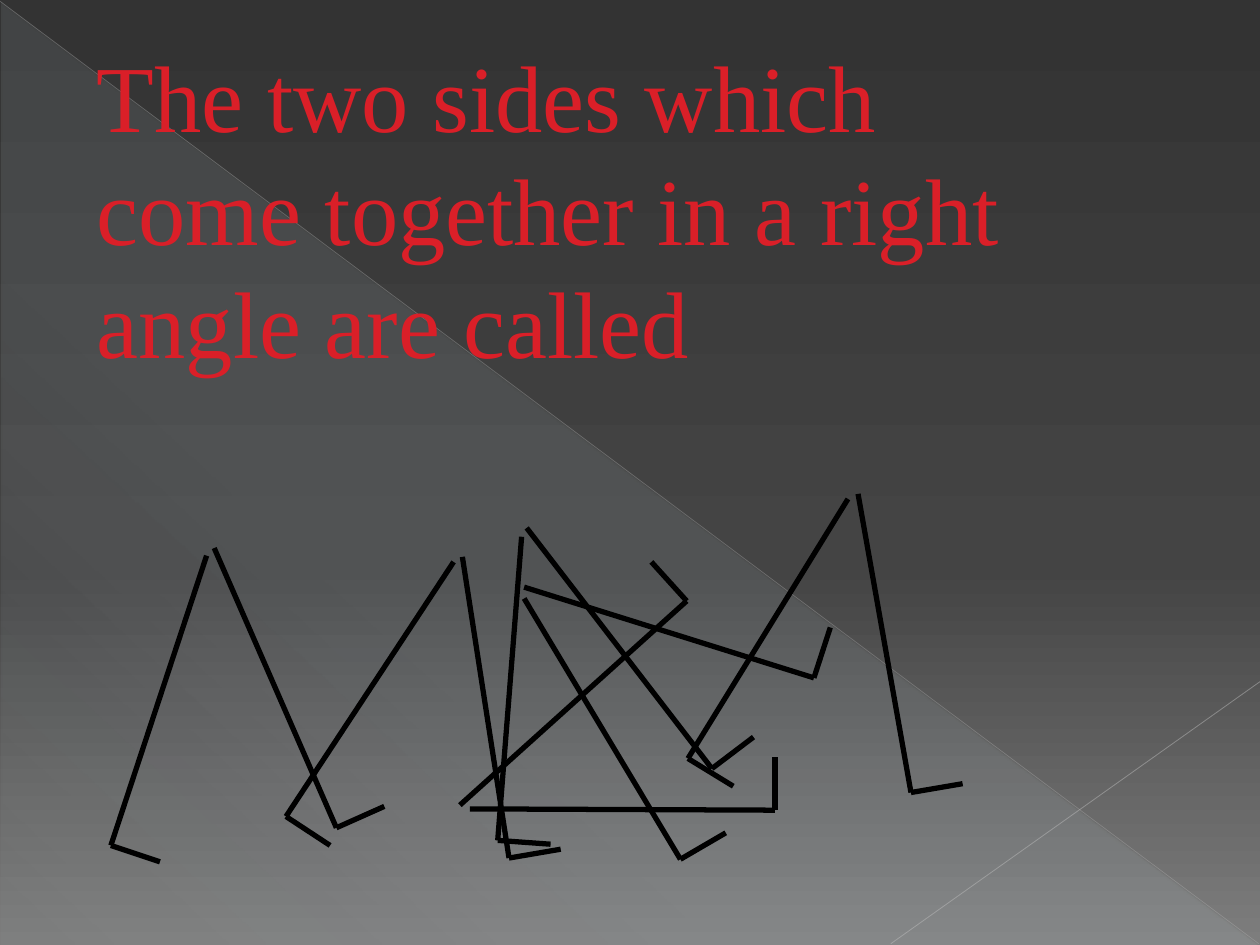
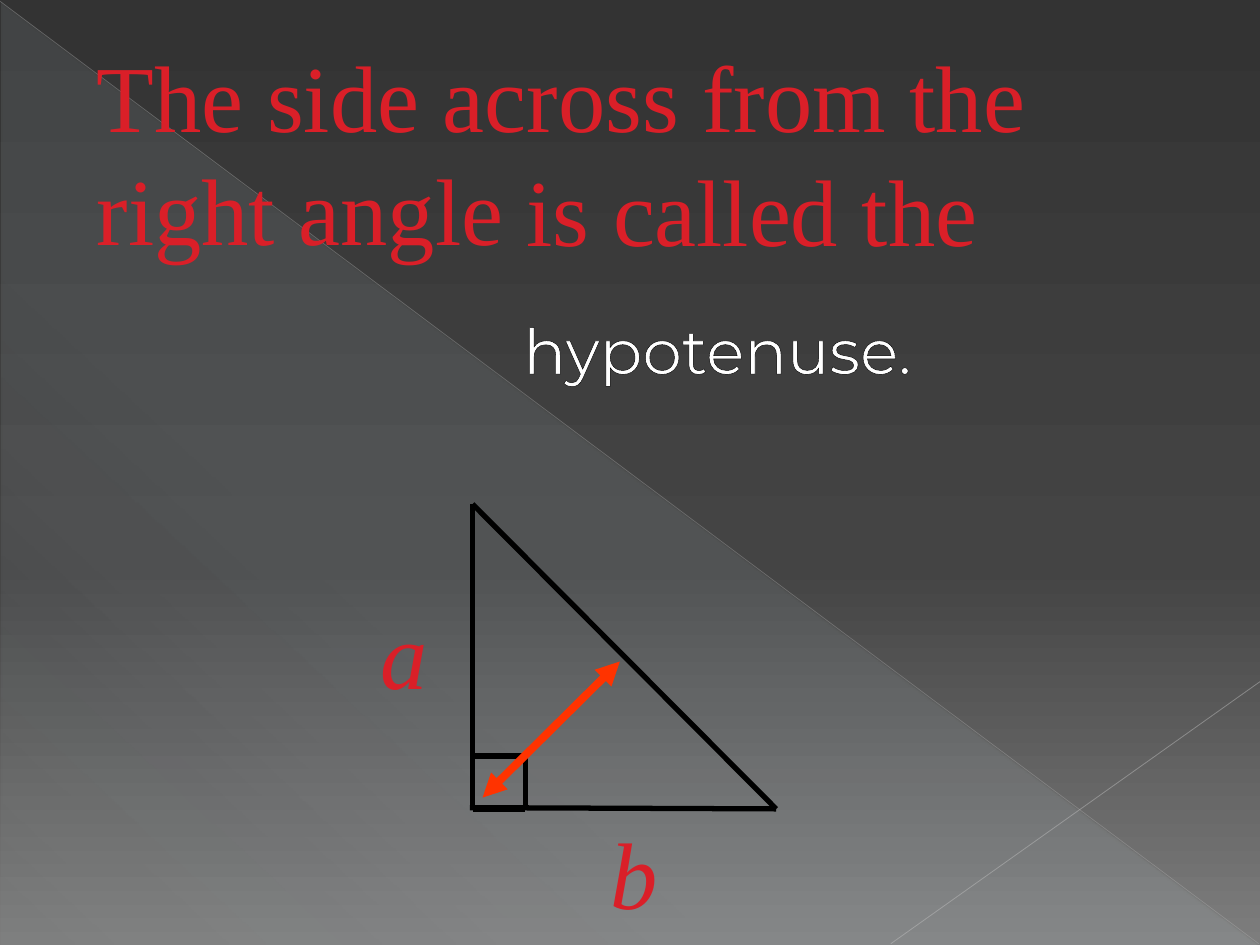
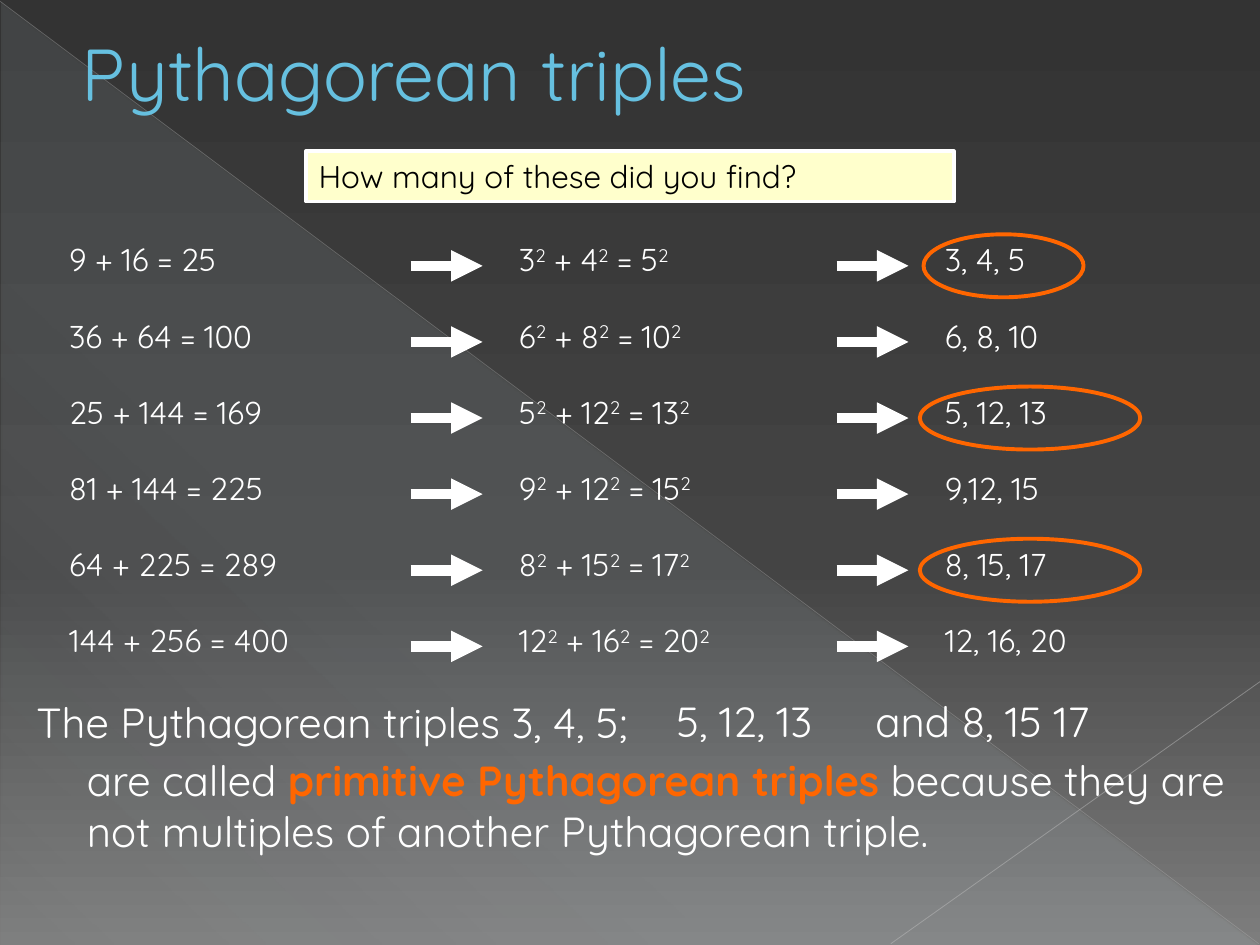
from dataclasses import dataclass
from typing import NamedTuple

from lxml import etree
from pptx import Presentation
from pptx.dml.color import RGBColor
from pptx.enum import shapes as kinds, text as modes
from pptx.oxml import ns
from pptx.util import Inches, Pt

HUES = {
    "black": "000000", "white": "FFFFFF", "red": "DA1F28", "flame": "FF3300",
    "orange": "FF6600", "cream": "FFFFCC", "sky": "66C0E0", "teal": "1F7084",
    "ice": "DEF5FA", "edge": "B9B9B9", "crease": "C1C1C1",
    "top": "333333", "mid": "444444", "low": "7D7D7D",
}
SERIF, SANS, ROUND = "Times New Roman", "Montserrat", "Quicksand"
BODY = {"name": ROUND, "size": Pt(18)}
NOTE = {"name": ROUND, "size": Pt(24)}
CLAIM = {"name": SERIF, "size": Pt(54)}
GROW = modes.MSO_AUTO_SIZE.SHAPE_TO_FIT_TEXT
LEFT, MID = modes.PP_ALIGN.LEFT, modes.PP_ALIGN.CENTER


class Point(NamedTuple):
    x: float
    y: float


class Box(NamedTuple):
    x: float
    y: float
    w: float
    h: float


class Run(NamedTuple):
    text: str
    hue: str = "white"
    bold: bool = False
    power: bool = False


class Stop(NamedTuple):
    at: int
    hue: str
    alpha: int = 100


@dataclass
class Stroke:
    hue: str = "black"
    width: float = 3
    alpha: int = 100
    ends: tuple = ()


@dataclass
class Triple:
    a: int
    b: int
    c: int
    label: str
    ring: float = 0


ANGLES = [
    [[(1.64, 4.41), (0.88, 6.71), (1.27, 6.84)], [(1.7, 4.35), (2.67, 6.57), (3.05, 6.4)]],
    [[(3.6, 4.46), (2.27, 6.48), (2.62, 6.71)], [(3.67, 4.42), (4.04, 6.81), (4.45, 6.74)]],
    [[(4.14, 4.26), (3.95, 6.67), (4.37, 6.7)], [(4.18, 4.19), (5.65, 6.1), (5.98, 5.85)]],
    [[(6.73, 3.96), (5.46, 6.02), (5.82, 6.24)], [(6.81, 3.92), (7.23, 6.29), (7.64, 6.22)]],
    [[(4.16, 4.75), (5.4, 6.82), (5.76, 6.61)], [(4.16, 4.66), (6.46, 5.38), (6.59, 4.98)]],
    [[(3.73, 6.42), (6.15, 6.43), (6.15, 6.01)], [(3.65, 6.39), (5.45, 4.77), (5.17, 4.46)]],
]
TRIPLES = [
    Triple(3, 4, 5, "3, 4, 5", 1.27),
    Triple(6, 8, 10, "6, 8, 10"),
    Triple(5, 12, 13, "5, 12, 13", 1.75),
    Triple(9, 12, 15, "9,12, 15"),
    Triple(8, 15, 17, "8, 15, 17", 1.75),
    Triple(12, 16, 20, "12, 16, 20"),
]


def rgb(hue: str) -> RGBColor:
    return RGBColor.from_string(HUES[hue])


def apply(item, form: dict) -> None:
    for key, value in form.items():
        setattr(item, key, value)


def tag(parent, name: str, **attrs):
    return etree.SubElement(parent, ns.qn(name), attrs)


def tint(parent, hue: str, alpha: int = 100) -> None:
    color = tag(parent, "a:srgbClr", val=HUES[hue])
    if alpha < 100:
        tag(color, "a:alpha", val=str(alpha * 1000))


def blend(owner, fill, stops: list[Stop], angle: int) -> None:
    """Give owner's fill a linear gradient, its angle counted clockwise."""
    fill.gradient()
    fill.gradient_angle = 360 - angle
    ramp = next(owner.element.iter(ns.qn("a:gsLst")))
    for old in list(ramp):
        ramp.remove(old)
    for stop in stops:
        tint(tag(ramp, "a:gs", pos=str(stop.at * 1000)), stop.hue, stop.alpha)


def draw_line(shapes, start, end, stroke: Stroke = Stroke()):
    link = shapes.add_connector(kinds.MSO_CONNECTOR.STRAIGHT,
                                *map(Inches, (*start, *end)))
    link.line.color.rgb = rgb(stroke.hue)
    link.line.width = Pt(stroke.width)
    if stroke.alpha < 100:
        color = next(link.element.iter(ns.qn("a:srgbClr")))
        tag(color, "a:alpha", val=str(stroke.alpha * 1000))
    for end_name in stroke.ends:
        tag(link.line._get_or_add_ln(), end_name, type="triangle")
    tag(link.element.spPr, "a:effectLst")
    return link


def draw_path(shapes, points, stroke: Stroke = Stroke()) -> None:
    for start, end in zip(points, points[1:]):
        draw_line(shapes, start, end, stroke)


def draw_shape(shapes, kind, box: Box):
    shape = shapes.add_shape(kind, *map(Inches, box))
    shape.shadow.inherit = False
    return shape


def write(frame, runs: list[Run], font: dict, align=LEFT):
    para = frame.paragraphs[0]
    para.alignment = align
    for part in runs:
        run = para.add_run()
        run.text = part.text
        apply(run.font, {**font, "bold": part.bold})
        run.font.color.rgb = rgb(part.hue)
        if part.power:
            run.font._element.set("baseline", "30000")
    return para


def edge_text(para, hue: str, width: float) -> None:
    """Outline the letters of a paragraph."""
    for run in para.runs:
        props = run.font._element
        line = etree.Element(ns.qn("a:ln"), w=str(Pt(width)))
        tint(tag(line, "a:solidFill"), hue)
        props.insert(0, line)


def add_text(slide, box: Box, runs: list[Run], font: dict,
             wrap: bool = False, align=LEFT, size=GROW):
    frame = slide.shapes.add_textbox(*map(Inches, box)).text_frame
    apply(frame, {"word_wrap": wrap, "auto_size": size})
    return write(frame, runs, font, align)


def add_claim(slide, box: Box, words: str, italic: bool = False) -> None:
    para = add_text(slide, box, [Run(words, "red")], {**CLAIM, "italic": italic}, wrap=True)
    gap = tag(para._p.get_or_add_pPr(), "a:spcBef")
    tag(gap, "a:spcPct", val="50000")


def dress_master(prs, slide) -> None:
    """Put the background and the folded-paper lines on the slide master."""
    master = prs.slide_master
    blend(master, master.background.fill,
          [Stop(0, "top"), Stop(60, "mid"), Stop(100, "low")], 90)
    fold = draw_shape(slide.shapes, kinds.MSO_SHAPE.RIGHT_TRIANGLE, Box(0.01, 0.02, 9.98, 7.48))
    blend(fold, fold.fill,
          [Stop(0, "ice", 10), Stop(70, "ice", 8), Stop(100, "ice", 1)], 133)
    fold.line.fill.background()
    decor = [
        fold,
        draw_line(slide.shapes, (0, 0.01), (9.99, 7.49), Stroke("edge", 0.39, 35)),
        draw_line(slide.shapes, (10, 5.41), (7.07, 7.49), Stroke("crease", 0.47, 45)),
    ]
    for i, item in enumerate(decor):
        next(item.element.iter(ns.qn("p:cNvPr"))).set("id", str(100 + i))
        master.shapes.element.insert(2 + i, item.element)


def build_legs(slide) -> None:
    add_claim(slide, Box(0.67, 0.25, 7.92, 3.74),
              "The two sides which come together in a right angle are called")
    for pair in ANGLES:
        group = slide.shapes.add_group_shape()
        for elbow in pair:
            draw_path(group.shapes, elbow)


def build_hypotenuse(slide) -> None:
    apex, corner, tip = Point(3.75, 4), Point(3.75, 6.42), Point(6.16, 6.42)
    side = 0.42
    draw_line(slide.shapes, tip, (3.73, 6.41))
    add_claim(slide, Box(0.67, 0.25, 9.08, 1.92), "The side across from the right angle")
    inner = Point(corner.x + side, corner.y - side)
    foot = Point(inner.x, corner.y)
    for points in ([foot, inner, (corner.x, inner.y)], [apex, corner, foot]):
        draw_path(slide.shapes.add_group_shape().shapes, points)
    add_claim(slide, Box(2.92, 4.67, 1.25, 1), "a", italic=True)
    add_claim(slide, Box(4.75, 6.42, 1.25, 1), "b", italic=True)
    draw_line(slide.shapes, apex, tip)
    add_claim(slide, Box(4.08, 1.16, 4.08, 1), "is called the")
    answer = add_text(slide, Box(2.83, 2.42, 5.73, 1.28), [Run("hypotenuse.")],
                      {"name": SANS, "size": Pt(36)}, align=MID,
                      size=modes.MSO_AUTO_SIZE.NONE)
    edge_text(answer, "black", 0.75)
    draw_line(slide.shapes, (3.83, 6.33), (4.92, 5.25),
              Stroke("flame", 4.5, ends=("a:headEnd", "a:tailEnd")))


def add_cell(slide, x: float, y: float, runs: list[Run], trim: float) -> None:
    """Add one text of a triple's row, as wide as its letters need."""
    count = sum(len(run.text) for run in runs)
    add_text(slide, Box(x, y, 0.185 * count - trim, 0.5), runs, BODY)


def add_triple(slide, row: Triple, y: float) -> None:
    sides = (row.a, row.b, row.c)
    sums = "{} + {} = {}".format(*(n * n for n in sides))
    powers = []
    for sign, n in zip(("", " + ", " = "), sides):
        powers += [Run(f"{sign}{n}"), Run("2", power=True)]
    add_cell(slide, 0.45, y, [Run(sums)], 0.14)
    add_cell(slide, 4.02, y, powers, 0.33)
    add_cell(slide, 7.4, y, [Run(row.label)], 0.17)
    for x in (3.26, 6.64):
        draw_line(slide.shapes, (x, y + 0.25), (x + 0.57, y + 0.25),
                  Stroke("white", 6, ends=("a:tailEnd",)))
    if row.ring:
        x = 7.33 if row.ring < 1.5 else 7.3
        ring = draw_shape(slide.shapes, kinds.MSO_SHAPE.OVAL, Box(x, y, row.ring, 0.5))
        ring.fill.background()
        ring.line.color.rgb = rgb("orange")
        ring.line.width = Pt(2.25)


def build_triples(slide) -> None:
    title = slide.shapes.title
    place = Box(0.55, -0.19, 9, 1.53)
    apply(title, dict(zip(("left", "top", "width", "height"), map(Inches, place))))
    apply(title.text_frame, {"vertical_anchor": modes.MSO_ANCHOR.MIDDLE,
                             "auto_size": modes.MSO_AUTO_SIZE.NONE})
    head = write(title.text_frame, [Run("Pythagorean triples", "sky")],
                 {"name": ROUND, "size": Pt(42)})
    apply(head._p.get_or_add_pPr(), {"marL": Inches(0.53), "indent": 0})
    edge_text(head, "teal", 0.5)

    ask = draw_shape(slide.shapes, kinds.MSO_SHAPE.RECTANGLE, Box(2.43, 1.2, 5.14, 0.4))
    ask.fill.solid()
    ask.fill.fore_color.rgb = rgb("cream")
    ask.line.color.rgb = rgb("white")
    ask.line.width = Pt(2.25)
    apply(ask.text_frame, {"word_wrap": True, "auto_size": GROW,
                           "vertical_anchor": modes.MSO_ANCHOR.TOP})
    write(ask.text_frame, [Run("How many of these did you find?", "black")], BODY)

    for i, row in enumerate(TRIPLES):
        add_triple(slide, row, 1.86 + 0.604 * i)
    for box, words in (
        (Box(0.19, 5.48, 5.13, 0.5), "The Pythagorean triples 3, 4, 5;"),
        (Box(5.27, 5.47, 1.5, 0.5), "5, 12, 13"),
        (Box(6.85, 5.47, 2.26, 0.5), "and 8, 15 17"),
    ):
        add_text(slide, box, [Run(words)], NOTE)
    add_text(slide, Box(0.59, 5.94, 9.35, 0.91), [
        Run("are called "),
        Run("primitive Pythagorean triples", "orange", bold=True),
        Run(" because they are not multiples of another Pythagorean triple."),
    ], NOTE, wrap=True)


def main() -> None:
    prs = Presentation()
    apply(prs, {"slide_width": Inches(10), "slide_height": Inches(7.5)})
    bare, titled = prs.slide_layouts[6], prs.slide_layouts[5]
    pages = ((bare, build_legs), (bare, build_hypotenuse), (titled, build_triples))
    for i, (layout, build) in enumerate(pages):
        slide = prs.slides.add_slide(layout)
        if i == 0:
            dress_master(prs, slide)
        build(slide)
    prs.save("out.pptx")


if __name__ == "__main__":
    main()
